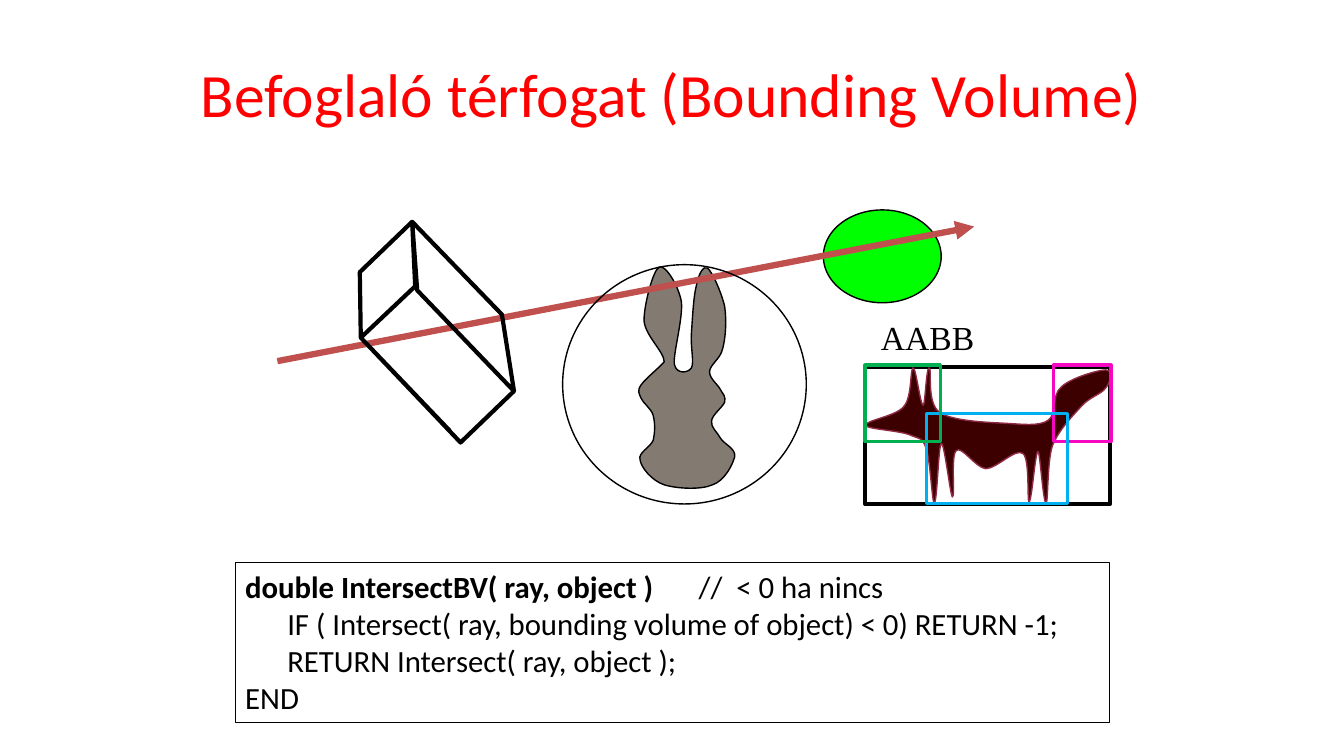
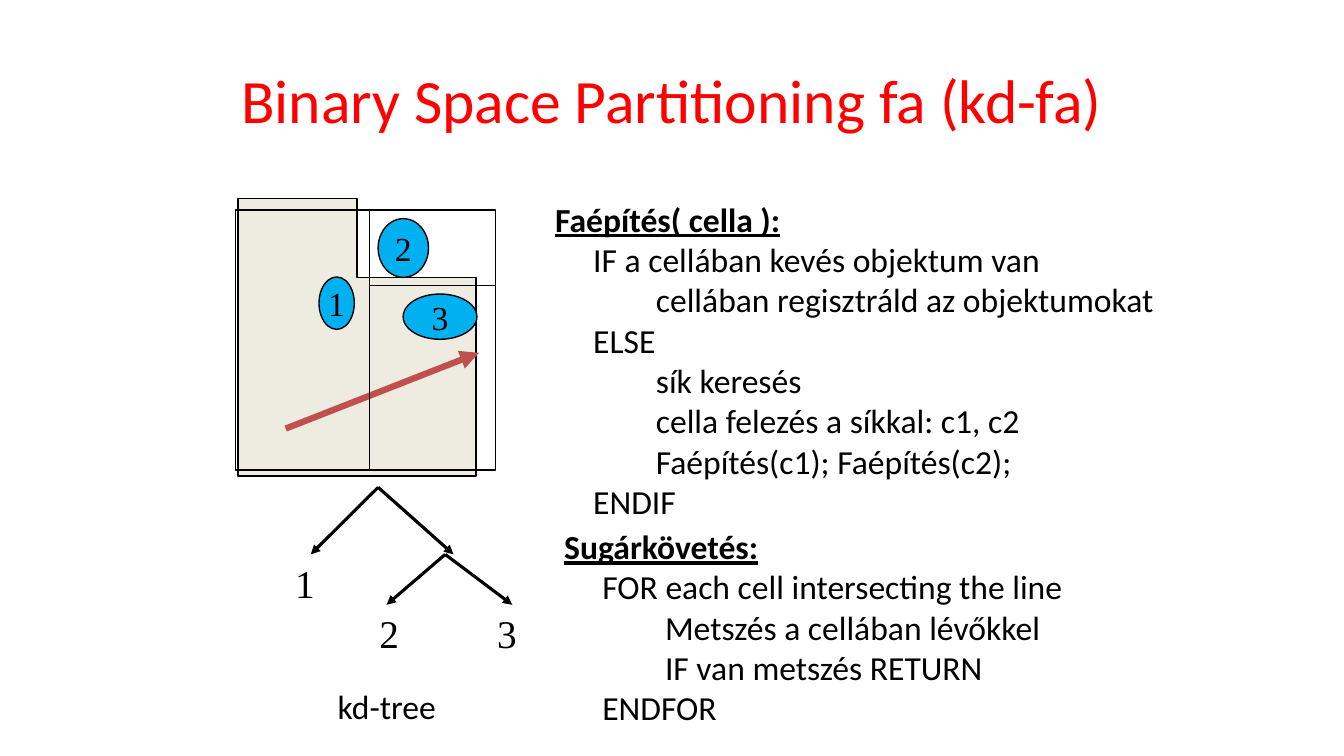
from lxml import etree
from pptx import Presentation
from pptx.dml.color import RGBColor
from pptx.enum import shapes as kinds, text as txt
from pptx.oxml.ns import qn
from pptx.util import Cm, Pt

BLACK = RGBColor(0x00, 0x00, 0x00)
RED = RGBColor(0xFF, 0x00, 0x00)
RAY = RGBColor(0xC0, 0x50, 0x4D)
LIME = RGBColor(0x00, 0xFF, 0x00)
GREEN = RGBColor(0x00, 0xB0, 0x50)
SKY = RGBColor(0x00, 0xB0, 0xF0)
PINK = RGBColor(0xF6, 0x08, 0xC3)
STONE = RGBColor(0x83, 0x7B, 0x71)
FOX = RGBColor(0x3C, 0x00, 0x00)
FOX_EDGE = RGBColor(0x90, 0x2A, 0x45)
SAND = RGBColor(0xEE, 0xEC, 0xE1)
SANS, SERIF = "Calibri", "Times New Roman"
RECT, OVAL = kinds.MSO_SHAPE.RECTANGLE, kinds.MSO_SHAPE.OVAL
CENTER = txt.PP_ALIGN.CENTER
MIDDLE = txt.MSO_ANCHOR.MIDDLE
OUTLINE_UNIT = Cm(0.0254)  # grid step of the free outlines

# Text: lines of (indent in cm, bold part, plain part)
INTERSECT_CODE = [
    (0, "double IntersectBV( ray, object )", "\t//  < 0 ha nincs"),
    (1.06, "", "IF ( Intersect( ray, bounding volume of object) < 0) RETURN -1;"),
    (1.06, "", "RETURN Intersect( ray, object );"),
    (0, "", "END"),
]
STEP, DEEP = 0.96, 2.54
BUILD_CODE = [
    (0, "Faépítés( cella ):", ""),
    (STEP, "", "IF a cellában kevés objektum van"),
    (DEEP, "", "cellában regisztráld az objektumokat"),
    (STEP, "", "ELSE"),
    (DEEP, "", "sík keresés"),
    (DEEP, "", "cella felezés a síkkal: c1, c2"),
    (DEEP, "", "Faépítés(c1); Faépítés(c2);"),
    (STEP, "", "ENDIF"),
]
TRACE_CODE = [
    (0, "Sugárkövetés:", ""),
    (STEP, "", "FOR each cell intersecting the line"),
    (DEEP, "", "Metszés a cellában lévőkkel"),
    (DEEP, "", "IF van metszés RETURN"),
    (STEP, "", "ENDFOR"),
]

# Outlines in grid steps; curves hold a start, then two controls and an end each
RABBIT = [
    (659, 359), (659, 349), (640, 333), (639, 318), (639, 302), (648, 268), (654, 265),
    (660, 262), (673, 283), (676, 299), (678, 315), (668, 350), (669, 361),
    (671, 372), (683, 370), (686, 365), (689, 360), (685, 344), (686, 331),
    (687, 317), (688, 294), (691, 283), (693, 272), (698, 263), (702, 266),
    (707, 270), (716, 291), (719, 304), (721, 318), (720, 335), (717, 346),
    (715, 356), (704, 362), (704, 369), (704, 376), (713, 382), (715, 387),
    (718, 392), (720, 393), (719, 399), (717, 404), (706, 412), (706, 418),
    (705, 424), (712, 429), (715, 435), (719, 441), (730, 445), (729, 453),
    (727, 461), (719, 477), (707, 481), (696, 486), (672, 485), (659, 481),
    (647, 477), (636, 464), (635, 456), (633, 449), (645, 444), (648, 437),
    (650, 429), (650, 419), (648, 412), (646, 405), (638, 400), (636, 395),
    (634, 390), (632, 388), (636, 382), (640, 376), (655, 364), (659, 359),
]
FOX_BODY = [
    (859, 422), (858, 417), (890, 413), (897, 403), (905, 394), (903, 366), (906, 365),
    (909, 365), (913, 402), (916, 402), (918, 402), (919, 364), (922, 365),
    (925, 366), (919, 399), (932, 409), (945, 418), (980, 419), (998, 420),
    (1016, 421), (1031, 423), (1040, 417), (1049, 411), (1043, 392), (1053, 384),
    (1062, 375), (1090, 367), (1097, 367), (1105, 367), (1102, 379), (1097, 385),
    (1093, 391), (1081, 394), (1073, 403), (1064, 413), (1050, 427), (1044, 443),
    (1039, 459), (1040, 499), (1038, 499), (1035, 500), (1032, 448), (1030, 448),
    (1027, 448), (1024, 497), (1021, 498), (1019, 498), (1022, 455), (1015, 450),
    (1008, 444), (989, 465), (978, 465), (968, 464), (954, 442), (949, 447),
    (943, 451), (948, 494), (945, 493), (943, 492), (937, 439), (934, 440),
    (931, 441), (930, 499), (927, 499), (925, 500), (923, 456), (919, 445),
    (915, 434), (914, 436), (904, 432), (894, 427), (860, 426), (859, 422),
]
BOX_WIRES = [
    (446, 427), (358, 335), (357, 270), (409, 220), (412, 284), (358, 335),
    (457, 439), (510, 388), (498, 312), (409, 220), (414, 288), (510, 388),
]

# Bounding boxes around the fox parts: place, colour
PART_BOXES = [
    ((26.55, 9.2, 1.45, 1.93), PINK),
    ((23.35, 10.41, 3.56, 2.29), SKY),
    ((21.8, 9.2, 1.9, 1.93), GREEN),
]

# Partitioned cell, its objects and the tree, in cm
CELL_LEFT, CELL_TOP, CELL_SIDE = 5.93, 5.29, 6.56
CELL_RIGHT, CELL_BOTTOM = CELL_LEFT + CELL_SIDE, CELL_TOP + CELL_SIDE
SPLIT_X, SPLIT_Y = 9.31, 7.2
OBJECTS = [
    ("2", (9.53, 5.51, 1.27, 1.48)),
    ("1", (8.04, 6.98, 0.89, 1.32)),
    ("3", (10.16, 7.41, 1.86, 1.14)),
]
BRANCHES = [
    ((9.53, 12.28), [(7.83, 13.97), (11.43, 13.97)]),
    ((11.22, 13.97), [(9.74, 15.24), (12.91, 15.24)]),
]
LEAVES = [("1", 7.19, 13.97), ("2", 9.31, 15.24), ("3", 12.28, 15.24)]


def write(frame, lines, size=24, font=SANS, color=BLACK, align=None,
          anchor=txt.MSO_ANCHOR.TOP, wrap=False, underline=False):
    """Fill a text frame; a plain string counts as one line."""
    if isinstance(lines, str):
        lines = [(0, "", lines)]
    frame.word_wrap = wrap
    frame.vertical_anchor = anchor
    for number, (indent, strong, plain) in enumerate(lines):
        para = frame.paragraphs[0] if number == 0 else frame.add_paragraph()
        para.alignment = align or txt.PP_ALIGN.LEFT
        if indent:
            para._p.get_or_add_pPr().set("marL", str(Cm(indent)))
        for words, bold in ((strong, True), (plain, False)):
            if words:
                span = para.add_run()
                span.text = words
                span.font.size, span.font.name = Pt(size), font
                span.font.color.rgb = color
                span.font.bold = bold
                span.font.underline = bold and underline


def add_text(page, place, lines, **style):
    box = page.shapes.add_textbox(*map(Cm, place))
    write(box.text_frame, lines, **style)


def add_title(page, place, words):
    add_text(page, place, words, size=44, color=RED, align=CENTER, anchor=MIDDLE, wrap=True)


def paint(shape, fill, line, width):
    shape.shadow.inherit = False
    if fill is None:
        shape.fill.background()
    else:
        shape.fill.solid()
        shape.fill.fore_color.rgb = fill
    shape.line.color.rgb = line
    shape.line.width = Pt(width)


def add_shape(page, kind, place, fill=None, line=BLACK, width=1):
    shape = page.shapes.add_shape(kind, *map(Cm, place))
    paint(shape, fill, line, width)
    return shape


def add_outline(page, points, scale=OUTLINE_UNIT, fill=None, line=BLACK, width=1,
                close=True, curved=False):
    builder = page.shapes.build_freeform(*points[0], scale=scale)
    builder.add_line_segments(points[1:], close=close)
    shape = builder.convert_to_shape()
    paint(shape, fill, line, width)
    if curved:  # join every three points into one Bézier segment
        steps = list(shape._element.iter(qn("a:lnTo")))
        for start in range(0, len(steps), 3):
            curve = etree.Element(qn("a:cubicBezTo"))
            steps[start].addprevious(curve)
            for step in steps[start:start + 3]:
                curve.append(step[0])
                step.getparent().remove(step)


def add_line(page, start, end, color=BLACK, width=1, arrow=False):
    line = page.shapes.add_connector(
        kinds.MSO_CONNECTOR.STRAIGHT, *map(Cm, (*start, *end)))
    line.line.color.rgb = color
    line.line.width = Pt(width)
    if arrow:
        etree.SubElement(line.line._get_or_add_ln(), qn("a:tailEnd"), type="triangle")
    etree.SubElement(line._element.spPr, qn("a:effectLst"))


def add_ray(page, start, end):
    add_line(page, start, end, color=RAY, width=4.5, arrow=True)


def bounding_volume(page):
    add_outline(page, RABBIT, fill=STONE, curved=True)
    add_shape(page, OVAL, (20.75, 5.29, 2.97, 2.34), fill=LIME)
    add_title(page, (1.69, 0.76, 30.48, 3.18), "Befoglaló térfogat (Bounding Volume)")
    add_shape(page, RECT, (21.8, 9.25, 6.18, 3.45), width=3)
    add_ray(page, (6.99, 9.1), (24.55, 5.71))
    add_shape(page, OVAL, (14.18, 6.67, 6.14, 6.03))
    add_outline(page, BOX_WIRES, width=3, close=False)
    # Pseudocode
    code = add_shape(page, RECT, (5.93, 14.18, 22.04, 4.03))
    write(code.text_frame, INTERSECT_CODE, size=22, wrap=True)
    # Fox and its boxes
    add_outline(page, FOX_BODY, fill=FOX, line=FOX_EDGE, curved=True)
    for place, color in PART_BOXES:
        add_shape(page, RECT, place, line=color, width=2.25)
    add_text(page, (21.95, 7.87, 2.9, 1.27), "AABB", font=SERIF)


def space_partitioning(page):
    add_title(page, (4.24, 0.91, 25.4, 3.18), "Binary Space Partitioning fa (kd-fa)")
    add_text(page, (13.74, 4.88, 15.75, 8.46), BUILD_CODE, underline=True)
    add_text(page, (13.97, 13.13, 13.18, 5.38), TRACE_CODE, underline=True)
    # Cell with the visited part shaded
    add_outline(page, [
        (CELL_LEFT, CELL_BOTTOM), (CELL_LEFT, CELL_TOP), (SPLIT_X, CELL_TOP),
        (SPLIT_X, SPLIT_Y), (CELL_RIGHT, SPLIT_Y), (CELL_RIGHT, CELL_BOTTOM),
    ], scale=Cm(1), fill=SAND)
    add_ray(page, (7.2, 10.8), (12.07, 8.89))
    add_shape(page, RECT, (CELL_LEFT, CELL_TOP, CELL_SIDE, CELL_SIDE))
    for name, place in OBJECTS:
        item = add_shape(page, OVAL, place, fill=SKY)
        write(item.text_frame, name, font=SERIF, align=CENTER, anchor=MIDDLE)
    add_line(page, (SPLIT_X, CELL_TOP), (SPLIT_X, CELL_BOTTOM))
    add_line(page, (SPLIT_X, SPLIT_Y), (CELL_RIGHT, SPLIT_Y))
    # Tree
    for parent, children in BRANCHES:
        for child in children:
            add_line(page, parent, child, width=2.25, arrow=True)
    for name, left, top in LEAVES:
        add_text(page, (left, top, 1.02, 1.45), name, size=28, font=SERIF)
    add_text(page, (8.26, 17.15, 3.02, 1.27), "kd-tree")


def main():
    deck = Presentation()
    deck.slide_width, deck.slide_height = Cm(33.87), Cm(19.05)
    for fill_page in (bounding_volume, space_partitioning):
        fill_page(deck.slides.add_slide(deck.slide_layouts[6]))
    deck.save("out.pptx")


if __name__ == "__main__":
    main()
